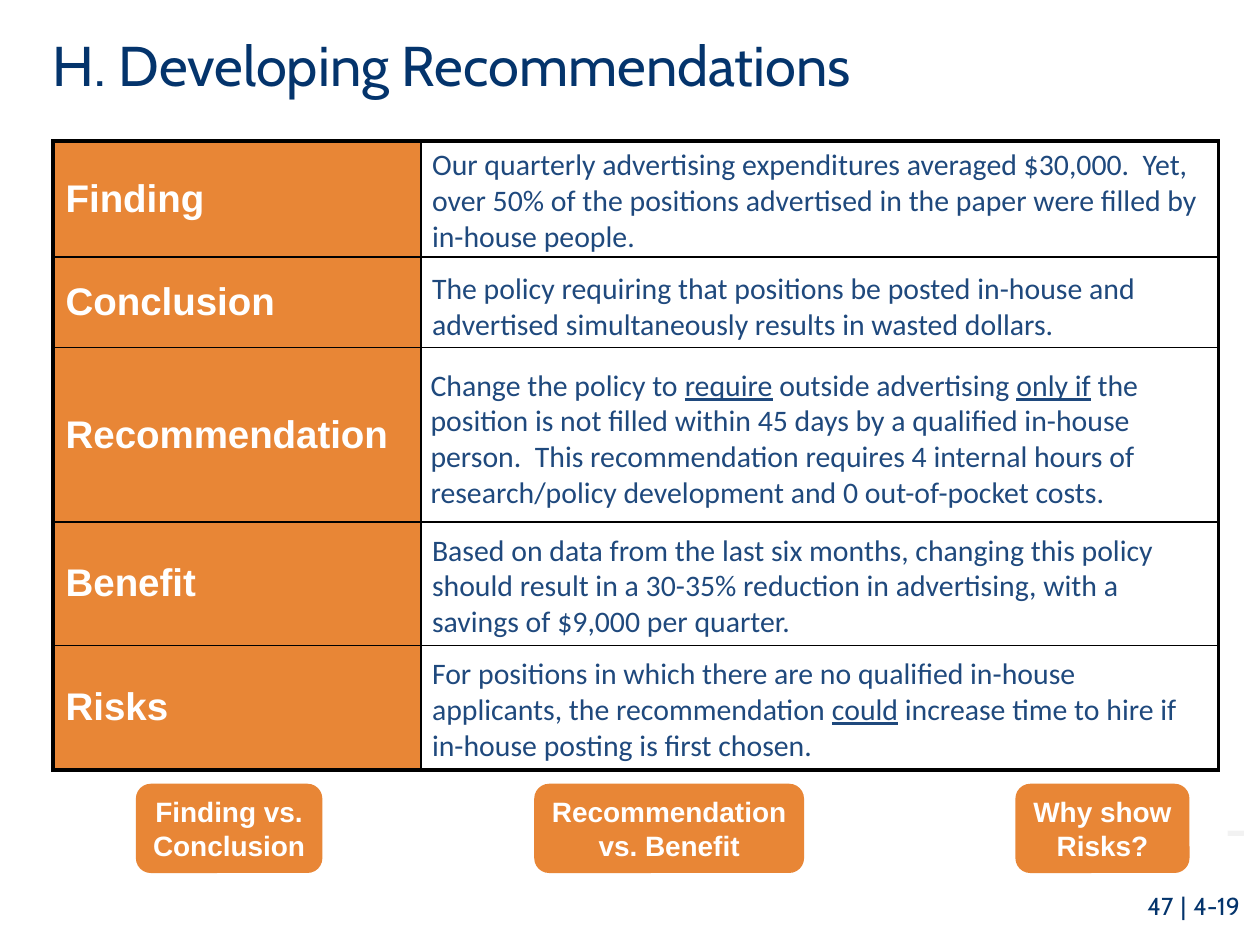
from lxml.etree import SubElement
from pptx import Presentation
from pptx.dml.color import RGBColor
from pptx.enum.shapes import MSO_SHAPE
from pptx.enum.text import MSO_ANCHOR, PP_ALIGN
from pptx.oxml.ns import qn
from pptx.util import Cm, Pt

COLORS = {
    "orange": "E46C0A",
    "white": "FFFFFF",
    "black": "000000",
    "body": "1F497D",
    "navy": "04346C",
    "pale": "F2F2F2",
}

LABELS = ["Finding", "Conclusion", "Recommendation", "Benefit", "Risks"]
ROW_HEIGHTS = [2.34, 1.83, 3.51, 2.49, 2.51]
COLUMN_WIDTHS = [7.42, 16.08]

# Left, top and height in cm, then the text with underlined words between underscores.
DESCRIPTIONS = [
    (8.46, 2.82, 2.44, "Our quarterly advertising expenditures averaged $30,000.  Yet, over 50% "
     "of the positions advertised in the paper were filled by in-house people."),
    (8.46, 5.31, 1.7, "The policy requiring that positions be posted in-house and advertised "
     "simultaneously results in wasted dollars."),
    (8.43, 7.26, 3.15, "Change the policy to _require_ outside advertising _only if_ the position "
     "is not filled within 45 days by a qualified in-house person.  This recommendation requires "
     "4 internal hours of research/policy development and 0 out-of-pocket costs."),
    (8.46, 10.59, 2.44, "Based on data from the last six months, changing this policy should "
     "result in a 30-35% reduction in advertising, with a savings of $9,000 per quarter."),
    (8.46, 13.08, 2.44, "For positions in which there are no qualified in-house applicants, the "
     "recommendation _could_ increase time to hire if in-house posting is first chosen."),
]

# Left and width in cm, then the text.
QUESTIONS = [
    (2.74, 3.76, "Finding vs.\vConclusion"),
    (10.77, 5.44, "Recommendation\vvs. Benefit"),
    (20.47, 3.51, "Why show\vRisks?"),
]


def format_font(font, name, size, color, bold=None):
    font.name = name
    font.size = Pt(size)
    font.color.rgb = RGBColor.from_string(COLORS[color])
    font.bold = bold


def format_runs(paragraph, *font_settings):
    for run in paragraph.runs:
        format_font(run.font, *font_settings)


def fill_orange(fill, element):
    """Fill with slightly transparent orange; element holds the fill."""
    fill.solid()
    fill.fore_color.rgb = RGBColor.from_string(COLORS["orange"])
    color = element.find(qn("a:solidFill")).find(qn("a:srgbClr"))
    SubElement(color, qn("a:alpha"), val="82000")


def set_borders(cell, widths):
    """Draw black borders; widths maps L, R, T and B to points."""
    properties = cell._tc.get_or_add_tcPr()
    for side, width in widths.items():
        line = SubElement(properties, qn(f"a:ln{side}"), w=str(int(Pt(width))))
        fill = SubElement(line, qn("a:solidFill"))
        SubElement(fill, qn("a:srgbClr"), val=COLORS["black"])


def add_title(slide, text):
    title = slide.shapes.title
    title.left, title.top, title.width, title.height = Cm(0.81), Cm(0.48), Cm(24.18), Cm(2.69)
    title.text_frame.text = text
    title.text_frame.vertical_anchor = MSO_ANCHOR.TOP
    paragraph = title.text_frame.paragraphs[0]
    paragraph.alignment = PP_ALIGN.LEFT
    format_runs(paragraph, "Cabin", 32, "navy")


def add_label_table(slide):
    table = slide.shapes.add_table(
        len(LABELS), 2, Cm(1.07), Cm(2.84), Cm(sum(COLUMN_WIDTHS)), Cm(sum(ROW_HEIGHTS))
    ).table
    table.first_row = table.horz_banding = False
    for column, width in zip(table.columns, COLUMN_WIDTHS):
        column.width = Cm(width)

    last = len(LABELS) - 1
    for index, (label, height) in enumerate(zip(LABELS, ROW_HEIGHTS)):
        table.rows[index].height = Cm(height)
        label_cell, blank_cell = table.cell(index, 0), table.cell(index, 1)
        top = 2.25 if index == 0 else 1
        bottom = 2.25 if index == last else 1
        set_borders(label_cell, {"L": 2.25, "R": 1, "T": top, "B": bottom})
        set_borders(blank_cell, {"L": 1, "R": 2.25, "T": top, "B": bottom})
        fill_orange(label_cell.fill, label_cell._tc.tcPr)
        blank_cell.fill.background()
        label_cell.vertical_anchor = MSO_ANCHOR.MIDDLE
        label_cell.text_frame.text = label
        format_runs(label_cell.text_frame.paragraphs[0], "Arial", 22, "white", True)


def add_text_box(slide, left, top, width, height, wrap=True):
    box = slide.shapes.add_textbox(Cm(left), Cm(top), Cm(width), Cm(height))
    box.text_frame.word_wrap = wrap
    return box.text_frame


def add_description(slide, left, top, height, text):
    paragraph = add_text_box(slide, left, top, COLUMN_WIDTHS[1], height).paragraphs[0]
    for index, part in enumerate(text.split("_")):
        run = paragraph.add_run()
        run.text = part
        format_font(run.font, "Calibri", 17, "body")
        run.font.underline = index % 2 == 1


def add_question(slide, left, width, text):
    shape = slide.shapes.add_shape(
        MSO_SHAPE.ROUNDED_RECTANGLE, Cm(left), Cm(15.8), Cm(width), Cm(1.8)
    )
    shape.shadow.inherit = False
    shape.line.fill.background()
    fill_orange(shape.fill, shape._element.spPr)
    text_frame = shape.text_frame
    text_frame.word_wrap = False
    text_frame.vertical_anchor = MSO_ANCHOR.MIDDLE
    text_frame.text = text
    paragraph = text_frame.paragraphs[0]
    paragraph.alignment = PP_ALIGN.CENTER
    format_runs(paragraph, "Arial", 16, "white", True)


def add_dash(slide):
    text_frame = add_text_box(slide, 24.43, 15.7, 0.97, 1.85, wrap=False)
    text_frame.vertical_anchor = MSO_ANCHOR.BOTTOM
    text_frame.text = "-"
    paragraph = text_frame.paragraphs[0]
    paragraph.alignment = PP_ALIGN.CENTER
    format_runs(paragraph, "Arial", 38, "pale")


def add_page_number(slide):
    paragraph = add_text_box(slide, 22.73, 17.7, 2.67, 1.35).paragraphs[0]
    paragraph.alignment = PP_ALIGN.CENTER
    for text in ["47", " ", "|", " ", "4-19"]:
        run = paragraph.add_run()
        run.text = text
        if text == " ":
            format_font(run.font, "Calibri", 18, "black")
        else:
            format_font(run.font, "Cabin", 14, "navy")


def main():
    presentation = Presentation()
    presentation.slide_width, presentation.slide_height = Cm(25.4), Cm(19.05)
    slide = presentation.slides.add_slide(presentation.slide_layouts[5])
    add_title(slide, "H. Developing Recommendations")
    add_label_table(slide)
    for description in DESCRIPTIONS:
        add_description(slide, *description)
    for question in QUESTIONS:
        add_question(slide, *question)
    add_dash(slide)
    add_page_number(slide)
    presentation.save("out.pptx")


if __name__ == "__main__":
    main()
